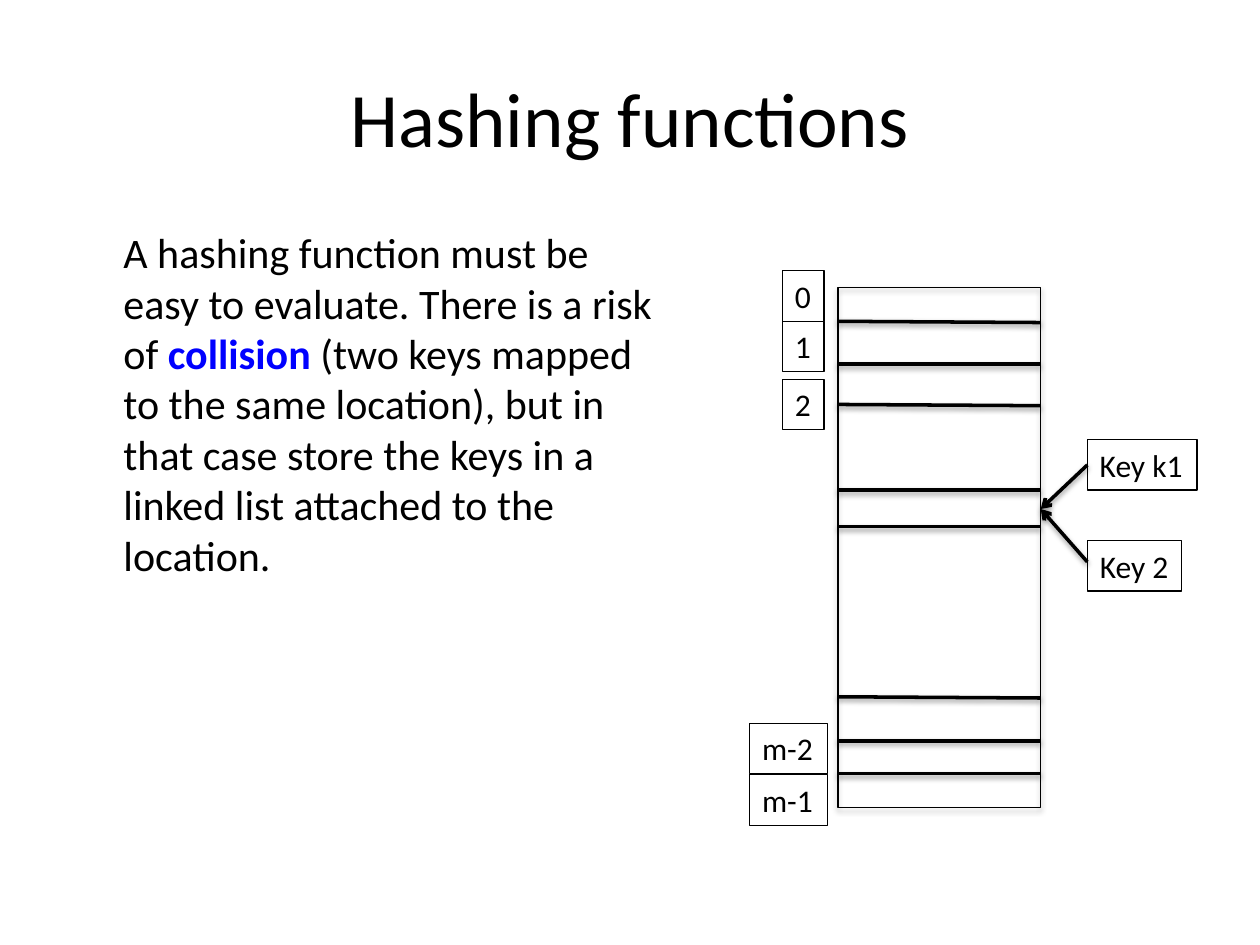
"""Build the slide on hashing functions with a hash table and colliding keys."""
from lxml import etree
from pptx import Presentation
from pptx.dml.color import RGBColor
from pptx.enum.shapes import MSO_CONNECTOR, MSO_SHAPE
from pptx.enum.text import MSO_ANCHOR, MSO_AUTO_SIZE, PP_ALIGN
from pptx.oxml import parse_xml
from pptx.oxml.ns import nsdecls, qn
from pptx.util import Inches, Pt


def style_text(span, size, color="000000", bold=False):
    formats = {"name": "Calibri", "size": Pt(size), "bold": bold}
    for name, value in formats.items():
        setattr(span.font, name, value)
    span.font.color.rgb = RGBColor.from_string(color)


def outline_with_shadow(item, width, distance, opacity):
    item.line.width = Pt(width)
    item.line.color.rgb = RGBColor.from_string("000000")
    item._element.spPr.append(parse_xml(
        f'<a:effectLst {nsdecls("a")}><a:outerShdw blurRad="{Pt(3.1)}" '
        f'dist="{Pt(distance)}" dir="5400000" rotWithShape="0"><a:srgbClr val="000000">'
        f'<a:alpha val="{opacity * 1000}"/></a:srgbClr></a:outerShdw></a:effectLst>'))


deck = Presentation()
deck.slide_width, deck.slide_height = Inches(10), Inches(7.5)
page = deck.slides.add_slide(deck.slide_layouts[5])

title = page.shapes.title
place = {"left": 0.5, "top": 0.3, "width": 9, "height": 1.25}
for name, value in place.items():
    setattr(title, name, Inches(value))
title.text_frame.vertical_anchor = MSO_ANCHOR.MIDDLE
heading = title.text_frame.paragraphs[0]
heading.alignment = PP_ALIGN.CENTER
span = heading.add_run()
span.text = "Hashing functions"
style_text(span, 44)

body = page.shapes.add_textbox(Inches(0.5), Inches(1.75), Inches(4.94), Inches(4.8))
body.text_frame.word_wrap = True
body.text_frame.margin_left = Inches(0.48)
para = body.text_frame.paragraphs[0]
para.space_before = Pt(4.8)
for text, color, bold in [
    ("A hashing function must be easy to evaluate. There is a risk of ", "000000", False),
    ("collision", "0000FF", True),
    (" (two keys mapped to the same location), but in that case store the keys "
     "in a linked list attached to the location.", "000000", False),
]:
    span = para.add_run()
    span.text = text
    style_text(span, 24, color, bold)

table_left, table_right = 6.65, 8.26
hash_table = page.shapes.add_shape(
    MSO_SHAPE.RECTANGLE, Inches(table_left), Inches(2.28),
    Inches(table_right - table_left), Inches(4.13))
hash_table.fill.background()
outline_with_shadow(hash_table, 0.75, 1.8, 35)

for start, end in [(2.55, 2.56), (2.89, 2.89), (3.21, 3.22), (3.89, 3.89),
                   (4.18, 4.18), (5.53, 5.54), (5.88, 5.88), (6.14, 6.14)]:
    divider = page.shapes.add_connector(
        MSO_CONNECTOR.STRAIGHT, Inches(table_left), Inches(start),
        Inches(table_right), Inches(end))
    outline_with_shadow(divider, 2, 1.6, 38)

for text, left, top, width in [
    ("0", 6.21, 2.15, 0.33), ("1", 6.21, 2.55, 0.33), ("2", 6.21, 3.01, 0.33),
    ("m-2", 5.95, 5.74, 0.62), ("m-1", 5.95, 6.15, 0.62),
    ("Key k1", 8.63, 3.49, 0.87), ("Key 2", 8.63, 4.29, 0.75),
]:
    box = page.shapes.add_textbox(Inches(left), Inches(top), Inches(width), Inches(0.4))
    box.line.width = Pt(0.75)
    box.line.color.rgb = RGBColor.from_string("000000")
    box.text_frame.word_wrap = False
    box.text_frame.auto_size = MSO_AUTO_SIZE.SHAPE_TO_FIT_TEXT
    span = box.text_frame.paragraphs[0].add_run()
    span.text = text
    style_text(span, 18)

for key_middle in (3.69, 4.46):
    arrow = page.shapes.add_connector(
        MSO_CONNECTOR.STRAIGHT, Inches(8.63), Inches(key_middle),
        Inches(table_right), Inches(4.04))
    outline_with_shadow(arrow, 2, 1.6, 38)
    etree.SubElement(arrow.line._get_or_add_ln(), qn("a:tailEnd"), type="arrow")

deck.save("out.pptx")
